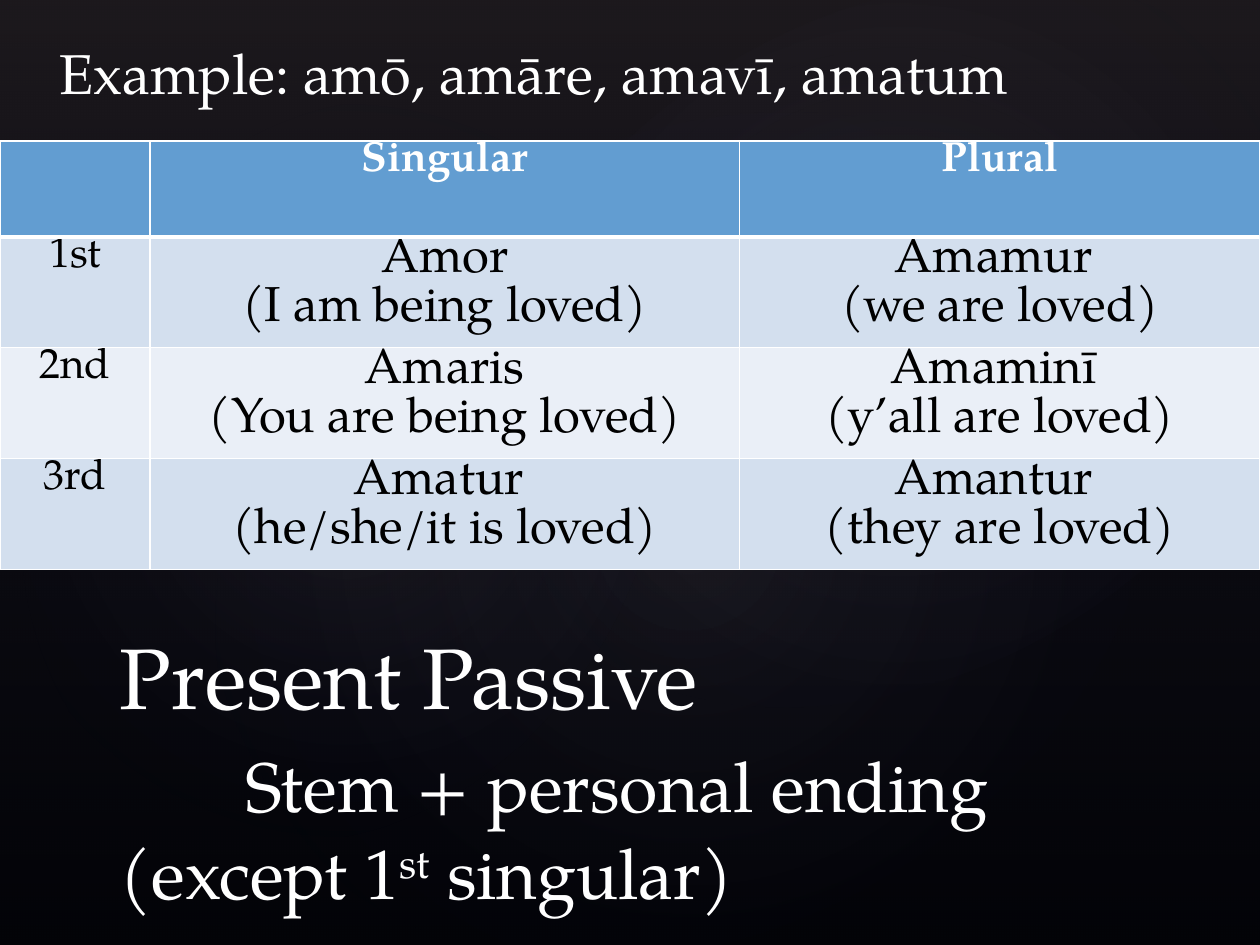
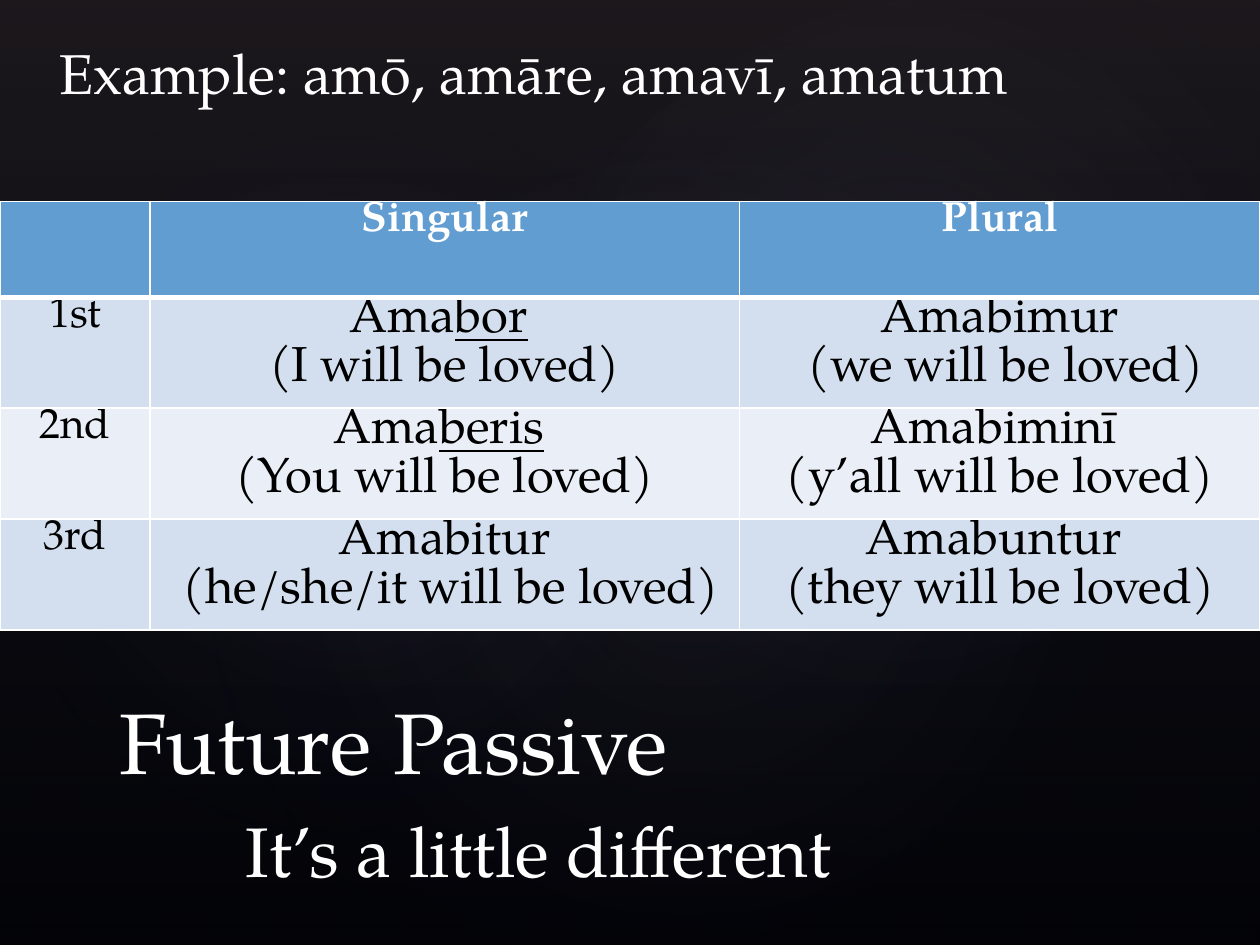
from copy import deepcopy

from lxml import etree
from pptx import Presentation
from pptx.dml.color import RGBColor
from pptx.enum.shapes import MSO_SHAPE
from pptx.enum.text import MSO_ANCHOR, MSO_AUTO_SIZE, PP_ALIGN
from pptx.oxml import parse_xml
from pptx.oxml.ns import nsdecls
from pptx.util import Inches, Pt

RECTANGLE, OVAL = MSO_SHAPE.RECTANGLE, MSO_SHAPE.OVAL
LEFT, CENTER = PP_ALIGN.LEFT, PP_ALIGN.CENTER
BOTTOM = MSO_ANCHOR.BOTTOM
NO_AUTOFIT = MSO_AUTO_SIZE.NONE

FONT = "TeX Gyre Pagella"
COLORS = {
    "background": "000000",
    "white": "FFFFFF",
    "black": "000000",
    "header": "629DD1",
    "odd row": "D3DFEE",
    "even row": "EAEFF7",
    "shade": "504652",
    "navy": "242852",
    "glow": "C4BCC6",
}
TITLE_ONLY = 5
COLUMN_WIDTHS = (1.19, 4.68, 4.13)
HEADER_HEIGHT, ROW_HEIGHT = 0.76, 0.88
HEADINGS = ("", "Singular", "Plural")
PERSONS = ("1st", "2nd", "3rd")
EXAMPLE = "Example: amō, amāre, amavī, amatum"

# Left, top, width, height, rotation and centre opacity of each glow
GLOWS = (
    (1.5, 1.14, 7.92, 6.24, 328.7, 7),
    (-0.3, 1.28, 6.06, 4.9, 294.3, 8),
    (3.58, 0.13, 7.09, 5.2, 328.7, 8),
)
LINEAR_DOWN = '<a:lin ang="5400000" scaled="0"/>'
RADIAL = ('<a:path path="circle"><a:fillToRect l="50000" t="50000" '
          'r="50000" b="50000"/></a:path>')

# An underscore pair marks the underlined ending
PRESENT = (
    (("Amor", "(I am being loved)"), ("Amamur ", "(we are loved)")),
    (("Amaris", "(You are being loved)"), ("Amaminī ", "(y’all are loved)")),
    (("Amatur ", "(he/she/it is loved)"), ("Amantur ", "(they are loved)")),
)
FUTURE = (
    (("Ama_bor_ ", "(I will be loved)"), ("Amabimur", " (we will be loved)")),
    (("Ama_beris_ ", "(You will be loved)"),
     ("Amabiminī ", "(y’all will be loved)")),
    (("Amabitur", " (he/she/it will be loved)"),
     ("Amabuntur ", "(they will be loved)")),
)


def color(name):
    return RGBColor.from_string(COLORS[name])


class Deck:
    """Holds the shared style and the slide being built."""

    def __init__(self):
        self.presentation = Presentation()
        self.presentation.slide_width = Inches(10)
        self.presentation.slide_height = Inches(7.5)
        self.layout = self.presentation.slide_layouts[TITLE_ONLY]
        self.slide = None

    def add_slide(self):
        self.slide = self.presentation.slides.add_slide(self.layout)

    def style(self, paragraph, size, color_name="white", align=LEFT, bold=False):
        paragraph.alignment = align
        font = paragraph.font
        font.name, font.size, font.bold = FONT, Pt(size), bold
        font.color.rgb = color(color_name)

    def gradient_shape(self, kind, box, stops, direction, rotation=0):
        """Add a translucent shape; stops are (position, colour, opacity)."""
        shape = self.slide.shapes.add_shape(kind, *map(Inches, box))
        shape.rotation = rotation
        shape.shadow.inherit = False
        shape.line.fill.background()
        stop_xml = "".join(
            f'<a:gs pos="{position * 1000}"><a:srgbClr val="{COLORS[name]}">'
            f'<a:alpha val="{opacity * 1000}"/></a:srgbClr></a:gs>'
            for position, name, opacity in stops)
        gradient = parse_xml(
            f'<a:gradFill {nsdecls("a")} rotWithShape="1">'
            f'<a:gsLst>{stop_xml}</a:gsLst>{direction}</a:gradFill>')
        shape._element.spPr.prstGeom.addnext(gradient)
        return shape

    def backdrop(self):
        """Draw the shared backdrop and move it to the slide master."""
        master = self.presentation.slide_master
        master.background.fill.solid()
        master.background.fill.fore_color.rgb = color("background")
        shapes = [self.gradient_shape(
            RECTANGLE, (0, 0, 10, 7.5),
            ((0, "shade", 36), (100, "navy", 10)), LINEAR_DOWN)]
        for *box, rotation, opacity in GLOWS:
            shapes.append(self.gradient_shape(
                OVAL, box, ((0, "glow", opacity), (58, "navy", 0), (100, "navy", 0)),
                RADIAL, rotation))
        for index, shape in enumerate(shapes):
            element = shape._element
            element.nvSpPr.cNvPr.set("id", str(100 + index))
            master.shapes._spTree.insert(2 + index, element)

    def title(self, top, heading, parts):
        """Fill the title: a heading, then a tabbed line of (text, raised)."""
        title = self.slide.shapes.title
        title.left, title.top = Inches(0.85), Inches(top)
        title.width, title.height = Inches(8.25), Inches(1)
        frame = title.text_frame
        frame.auto_size, frame.vertical_anchor = NO_AUTOFIT, BOTTOM
        paragraph = frame.paragraphs[0]
        self.style(paragraph, 40)
        paragraph._p.get_or_add_pPr().set("defTabSz", str(Inches(1)))
        heading_run = paragraph.add_run()
        heading_run.text, heading_run.font.size = heading, Pt(49)
        paragraph.add_line_break()
        paragraph._p[-1].append(deepcopy(heading_run.font._element))
        tab_run = paragraph.add_run()
        tab_run.text, tab_run.font.size = "\t", Pt(49)
        for text, raised in parts:
            run = paragraph.add_run()
            run.text = text
            if raised:
                run.font._element.set("baseline", "30000")

    def example(self):
        box = self.slide.shapes.add_textbox(
            Inches(0.37), Inches(0.26), Inches(8.15), Inches(0.64))
        box.text_frame.word_wrap = True
        paragraph = box.text_frame.paragraphs[0]
        paragraph.text = EXAMPLE
        self.style(paragraph, 32)

    def borders(self, cell, top, bottom):
        properties = cell._tc.get_or_add_tcPr()
        for side, width in (("L", 1), ("R", 1), ("T", top), ("B", bottom)):
            line = etree.SubElement(properties, f"{{{properties.nsmap['a']}}}ln{side}",
                                    w=str(Pt(width)))
            line.append(parse_xml(
                f'<a:solidFill {nsdecls("a")}>'
                f'<a:srgbClr val="{COLORS["white"]}"/></a:solidFill>'))

    def cell(self, cell, lines, size, fill, text_color="black", bold=False):
        cell.fill.solid()
        cell.fill.fore_color.rgb = color(fill)
        cell.margin_top = cell.margin_bottom = 0
        frame = cell.text_frame
        for index, line in enumerate(lines):
            paragraph = frame.add_paragraph() if index else frame.paragraphs[0]
            self.style(paragraph, size, text_color, CENTER, bold)
            for part, text in enumerate(line.split("_")):
                if text:
                    run = paragraph.add_run()
                    run.text = text
                    if part % 2:
                        run.font.underline = True

    def conjugation(self, top, forms):
        height = HEADER_HEIGHT + ROW_HEIGHT * len(forms)
        table = self.slide.shapes.add_table(
            len(forms) + 1, len(HEADINGS), 0, Inches(top),
            Inches(10), Inches(height)).table
        for column, width in zip(table.columns, COLUMN_WIDTHS):
            column.width = Inches(width)
        for index, row in enumerate(table.rows):
            row.height = Inches(ROW_HEIGHT if index else HEADER_HEIGHT)
            for cell in row.cells:
                self.borders(cell, 3 if index == 1 else 1, 1 if index else 3)
        for column, heading in enumerate(HEADINGS):
            self.cell(table.cell(0, column), [heading], 24, "header", "white", True)
        for row, (person, pair) in enumerate(zip(PERSONS, forms), start=1):
            fill = "odd row" if row % 2 else "even row"
            self.cell(table.cell(row, 0), [person], 24, fill)
            for column, lines in enumerate(pair, start=1):
                self.cell(table.cell(row, column), lines, 28, fill)


def main():
    deck = Deck()
    deck.add_slide()
    deck.backdrop()
    deck.conjugation(1.12, PRESENT)
    deck.title(6.3, "Present Passive", (
        ("Stem + personal ending (except 1", False),
        ("st", True),
        (" singular)", False)))
    deck.example()

    deck.add_slide()
    deck.conjugation(1.6, FUTURE)
    deck.title(6.15, "Future Passive", (("It’s a little different", False),))
    deck.example()
    deck.presentation.save("out.pptx")


if __name__ == "__main__":
    main()
